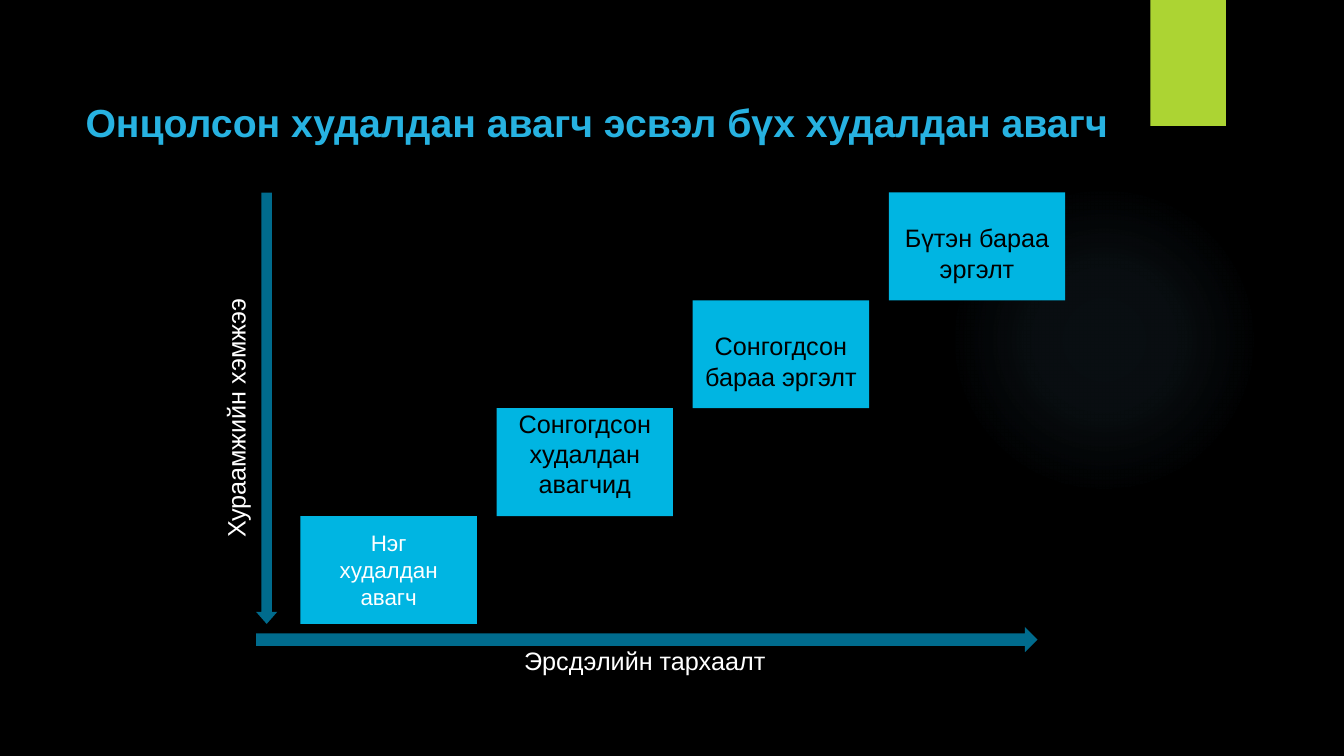
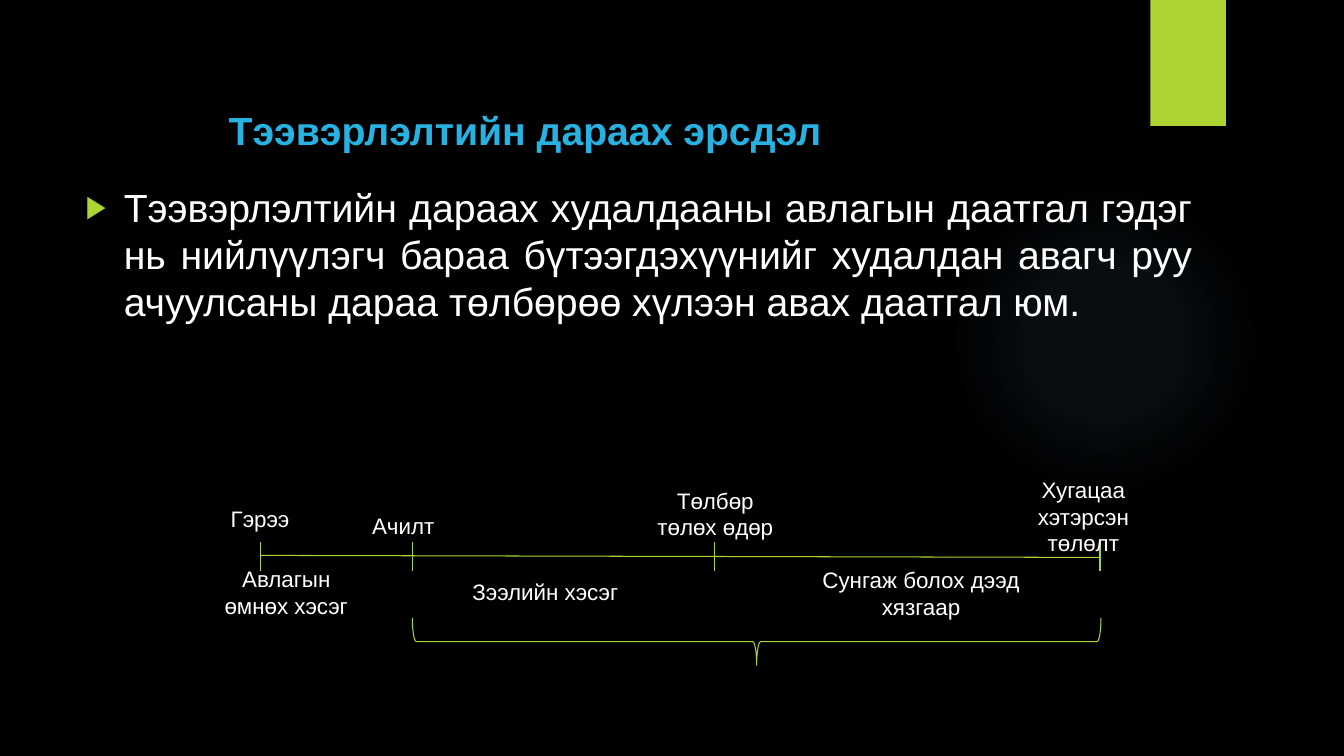
from lxml import etree
from pptx import Presentation
from pptx.dml.color import RGBColor
from pptx.enum.shapes import MSO_CONNECTOR, MSO_SHAPE
from pptx.enum.text import MSO_ANCHOR, PP_ALIGN
from pptx.oxml import parse_xml
from pptx.oxml.ns import nsdecls, qn
from pptx.util import Inches, Pt

FONT = "Arial"
BLACK = "000000"
WHITE = "FFFFFF"
TITLE_BLUE = "27B2E1"
STEP_BLUE = "00B5E2"
ARROW_BLUE = "006B8D"
GLOW_BLUE = "7AC4F0"
LIME = "ACD433"
GLOW_STOPS = [(0, 7), (36, 6), (69, 0)]

STEP_WIDTH, STEP_HEIGHT = 1.75, 1.07
STEP_LEFT, STEP_TOP, STEP_PITCH = 2.98, 1.91, 1.945
STEPS = [
    ("Нэг худалдан авагч", 16, WHITE, 0.13, 0.23),
    ("Сонгогдсон худалдан авагчид", 18, BLACK, 0, 0),
    ("Сонгогдсон бараа эргэлт", 18, BLACK, 0.3, 0),
    ("Бүтэн бараа эргэлт", 18, BLACK, 0.3, 0),
]

TICKS = [2.58, 4.09, 7.09, 10.91]
TIMELINE_LABELS = [
    ("Гэрээ", 1.83, 5, 1.5, 0.28),
    ("Ачилт", 3.25, 5.07, 1.5, 0.28),
    ("Төлбөр төлөх өдөр", 6.38, 4.88, 1.43, 0.43),
    ("Хугацаа хэтэрсэн төлөлт", 9.92, 4.89, 1.65, 0.46),
    ("Авлагын өмнөх хэсэг", 2.01, 5.73, 1.66, 0.28),
    ("Зээлийн хэсэг", 4.58, 5.73, 1.66, 0.28),
    ("Сунгаж болох дээд хязгаар", 8.02, 5.74, 2.23, 0.28),
]
BODY = (
    "Тээвэрлэлтийн дараах худалдааны авлагын даатгал гэдэг нь нийлүүлэгч бараа "
    "бүтээгдэхүүнийг худалдан авагч руу ачуулсаны дараа төлбөрөө хүлээн авах даатгал юм."
)


def color(value):
    """Return the colour for a hex string."""
    return RGBColor.from_string(value)


def add_shape(slide, kind, left, top, width, height, fill=None, line=None):
    """Add a flat preset shape with an optional fill and thin outline."""
    shape = slide.shapes.add_shape(
        kind, Inches(left), Inches(top), Inches(width), Inches(height))
    shape.shadow.inherit = False
    if fill:
        shape.fill.solid()
        shape.fill.fore_color.rgb = color(fill)
    else:
        shape.fill.background()
    if line:
        shape.line.color.rgb = color(line)
        shape.line.width = Pt(0.75)
    else:
        shape.line.fill.background()
    return shape


def set_text(shape, text, size, text_color, align=PP_ALIGN.CENTER,
             anchor=MSO_ANCHOR.TOP, margins=(0, 0)):
    """Fill a shape with one styled paragraph and return the paragraph."""
    frame = shape.text_frame
    frame.word_wrap = True
    frame.vertical_anchor = anchor
    vertical, horizontal = (Inches(margin) for margin in margins)
    frame.margin_top = frame.margin_bottom = vertical
    frame.margin_left = frame.margin_right = horizontal
    paragraph = frame.paragraphs[0]
    paragraph.text = text
    paragraph.alignment = align
    paragraph.font.name = FONT
    paragraph.font.size = Pt(size)
    paragraph.font.color.rgb = color(text_color)
    return paragraph


def add_text(slide, text, left, top, width, height, size, text_color=WHITE, **layout):
    """Add a text box and return it with its paragraph."""
    box = slide.shapes.add_textbox(
        Inches(left), Inches(top), Inches(width), Inches(height))
    return box, set_text(box, text, size, text_color, **layout)


def add_line(slide, start_x, start_y, end_x, end_y):
    """Add a thin lime line without a shadow."""
    line = slide.shapes.add_connector(
        MSO_CONNECTOR.STRAIGHT,
        Inches(start_x), Inches(start_y), Inches(end_x), Inches(end_y))
    line.line.color.rgb = color(LIME)
    line.line.width = Pt(0.75)
    etree.SubElement(line._element.spPr, qn("a:effectLst"))


def add_glow(slide):
    """Add the faint round glow behind the content."""
    glow = add_shape(slide, MSO_SHAPE.OVAL, 9.41, 1.83, 3.08, 3.08)
    stops = "".join(
        f'<a:gs pos="{position * 1000}"><a:srgbClr val="{GLOW_BLUE}">'
        f'<a:alpha val="{alpha * 1000}"/></a:srgbClr></a:gs>'
        for position, alpha in GLOW_STOPS)
    gradient = parse_xml(
        f'<a:gradFill {nsdecls("a")} rotWithShape="1"><a:gsLst>{stops}</a:gsLst>'
        '<a:path path="circle"><a:fillToRect l="50000" t="50000" r="50000" b="50000"/>'
        '</a:path></a:gradFill>')
    properties = glow._element.spPr
    properties.replace(properties.find(qn("a:noFill")), gradient)


def add_bullet(paragraph):
    """Give a paragraph a hanging lime triangle bullet."""
    properties = paragraph._p.get_or_add_pPr()
    properties.set("marL", str(Inches(0.38)))
    properties.set("indent", str(-Inches(0.38)))
    bullet = (
        f'<a:buClr {nsdecls("a")}><a:srgbClr val="{LIME}"/></a:buClr>',
        f'<a:buSzPct {nsdecls("a")} val="80000"/>',
        f'<a:buFont {nsdecls("a")} typeface="{FONT}"/>',
        f'<a:buChar {nsdecls("a")} char="▶"/>',
    )
    for position, element in enumerate(bullet):
        properties.insert(position, parse_xml(element))


def add_base_slide(presentation, title, left, top, width):
    """Add a slide with the shared background, glow, band and title."""
    slide = presentation.slides.add_slide(presentation.slide_layouts[6])
    slide.background.fill.solid()
    slide.background.fill.fore_color.rgb = color(BLACK)
    add_glow(slide)
    add_shape(slide, MSO_SHAPE.RECTANGLE, 11.41, 0, 0.75, 1.25, LIME)
    _, paragraph = add_text(
        slide, title, left, top, width, 0.58, 28, TITLE_BLUE,
        align=PP_ALIGN.LEFT, anchor=MSO_ANCHOR.MIDDLE, margins=(0.05, 0.1))
    paragraph.font.bold = True
    return slide


def add_steps_slide(presentation):
    """Build the rising steps between two axis arrows."""
    slide = add_base_slide(
        presentation, "Онцолсон худалдан авагч эсвэл бүх худалдан авагч", 0.75, 0.92, 10.42)
    add_shape(slide, MSO_SHAPE.RIGHT_ARROW, 2.54, 6.22, 7.75, 0.25, ARROW_BLUE)
    down_arrow = add_shape(slide, MSO_SHAPE.DOWN_ARROW, 2.54, 1.91, 0.21, 4.28, ARROW_BLUE)
    down_arrow.adjustments[1] = 0.57
    for index, (text, size, text_color, top_margin, side_margin) in enumerate(STEPS):
        top = STEP_TOP + STEP_HEIGHT * (len(STEPS) - 1 - index)
        step = add_shape(
            slide, MSO_SHAPE.RECTANGLE, STEP_LEFT + STEP_PITCH * index, top,
            STEP_WIDTH, STEP_HEIGHT, STEP_BLUE)
        set_text(step, text, size, text_color, margins=(0, side_margin))
        step.text_frame.margin_top = Inches(top_margin)
    vertical_label, _ = add_text(slide, "Хураамжийн хэмжээ", 0.86, 4, 2.95, 0.3, 18)
    vertical_label.rotation = 270
    add_text(slide, "Эрсдэлийн тархаалт", 4.92, 6.4, 2.95, 0.3, 18)


def add_timeline_slide(presentation):
    """Build the definition and the timeline below it."""
    slide = add_base_slide(presentation, "Тээвэрлэлтийн дараах эрсдэл", 2.17, 1, 9)
    _, paragraph = add_text(
        slide, BODY, 0.75, 1.77, 11.17, 4.93, 28,
        align=PP_ALIGN.JUSTIFY, margins=(0.05, 0.1))
    add_bullet(paragraph)
    add_line(slide, TICKS[0], 5.51, TICKS[-1], 5.53)
    for tick in TICKS:
        add_line(slide, tick, 5.38, tick, 5.66)
    for text, left, top, width, height in TIMELINE_LABELS:
        add_text(slide, text, left, top, width, height, 16,
                 anchor=MSO_ANCHOR.MIDDLE, margins=(0.05, 0.1))
    brace = add_shape(slide, MSO_SHAPE.LEFT_BRACE, 7.27, 2.95, 0.47, 6.83, line=LIME)
    brace.rotation = 270


def main():
    """Build and save the presentation."""
    presentation = Presentation()
    presentation.slide_width = Inches(13.33)
    presentation.slide_height = Inches(7.5)
    add_steps_slide(presentation)
    add_timeline_slide(presentation)
    presentation.save("out.pptx")


if __name__ == "__main__":
    main()
